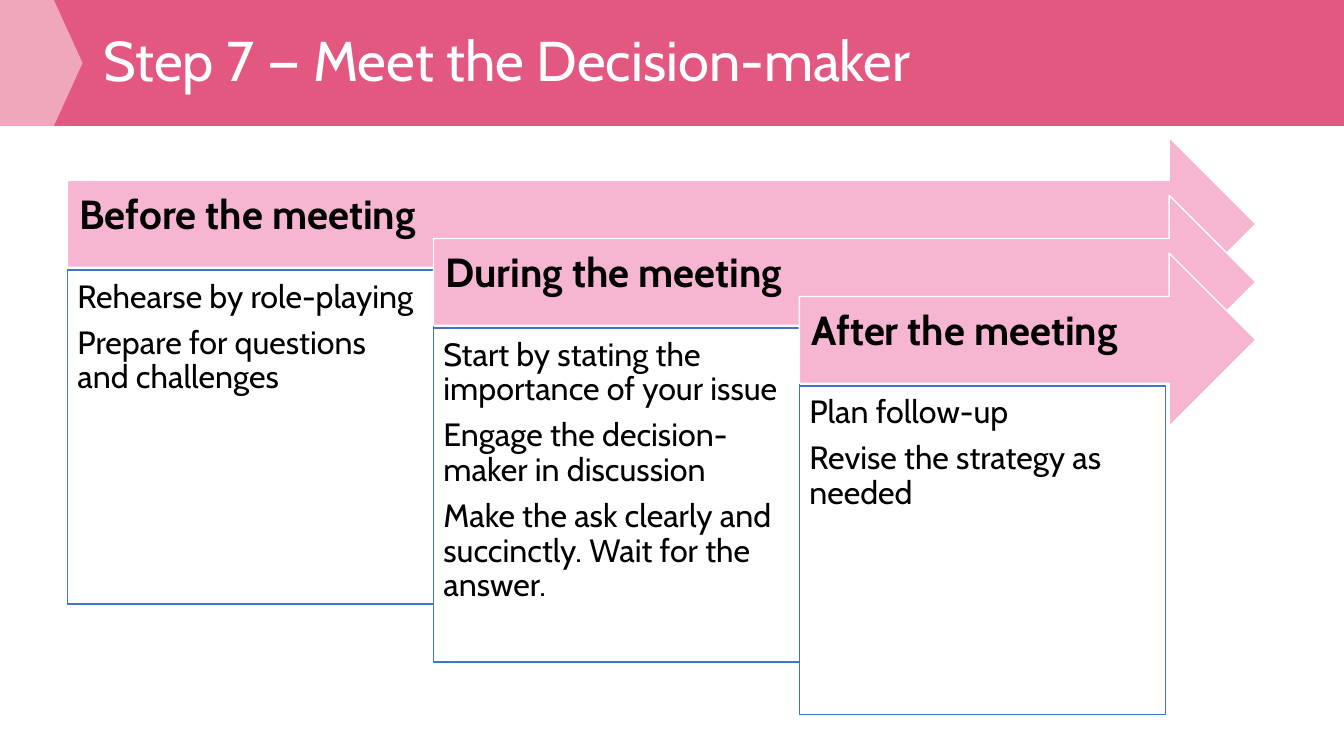
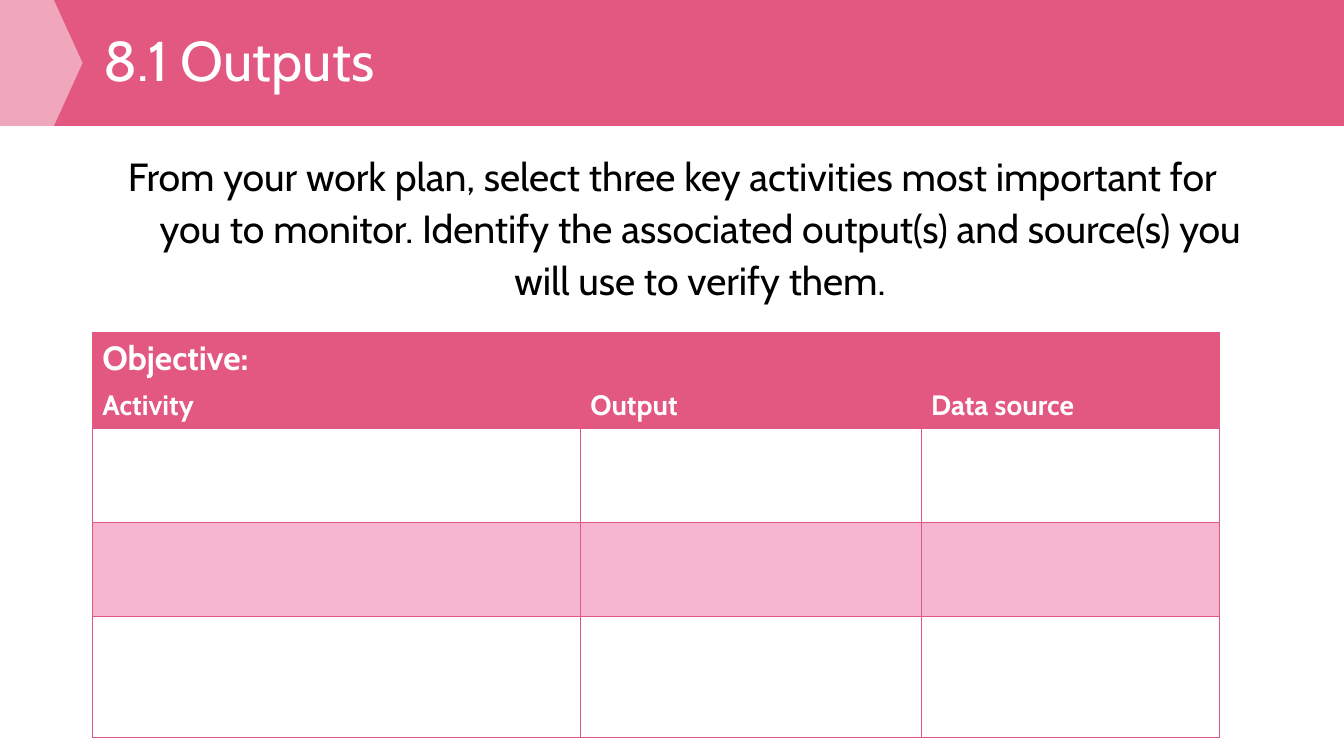
from lxml import etree
from pptx import Presentation
from pptx.dml.color import RGBColor
from pptx.enum.shapes import MSO_SHAPE
from pptx.enum.text import MSO_ANCHOR, PP_ALIGN
from pptx.oxml.ns import qn
from pptx.util import Pt

RECT, ARROW, PENTAGON = MSO_SHAPE.RECTANGLE, MSO_SHAPE.RIGHT_ARROW, MSO_SHAPE.PENTAGON
TOP, MIDDLE = MSO_ANCHOR.TOP, MSO_ANCHOR.MIDDLE
LEFT, CENTER = PP_ALIGN.LEFT, PP_ALIGN.CENTER

ROSE = RGBColor(0xE3, 0x58, 0x80)
PINK = RGBColor(0xF6, 0xB5, 0xD1)
BLUE = RGBColor(0x44, 0x72, 0xC4)
WHITE = RGBColor(0xFF, 0xFF, 0xFF)
BLACK = RGBColor(0, 0, 0)

FONT = "Cabin"
WIDTH, HEIGHT = 960, 540
BAND_H = 90

STAGE_LEFT, STAGE_TOP, STAGE_RIGHT = 48.25, 98, 897.1
STAGE_W, STAGE_DROP = 261.4, 41.4
ARROW_H, BOX_OFFSET = 124, 95
STAGES = [
    ("Before the meeting", 238.4,
     ["Rehearse by role-playing", "Prepare for questions and challenges"]),
    ("During the meeting", 238.4,
     ["Start by stating the importance of your issue",
      "Engage the decision-maker in discussion",
      "Make the ask clearly and succinctly. Wait for the answer."]),
    ("After the meeting", 234.7,
     ["Plan follow-up", "Revise the strategy as needed"]),
]

TASK = ("From your work plan, select three key activities most important for "
        "you to monitor. Identify the associated output(s) and source(s) you "
        "will use to verify them.")
COLUMNS = [("Activity", 348.5), ("Output", 243.4), ("Data source", 213.1)]
ROW_HEIGHTS = [36.4, 32, 67, 67, 87]
ROW_FILLS = [ROSE, ROSE, WHITE, PINK, WHITE]


class Deck:
    def __init__(self):
        self.prs = Presentation()
        self.prs.slide_width, self.prs.slide_height = Pt(WIDTH), Pt(HEIGHT)
        self.s = None

    def slide(self, title):
        self.s = self.prs.slides.add_slide(self.prs.slide_layouts[6])
        self.shape(RECT, 0, 0, WIDTH, BAND_H, ROSE)
        tab = self.shape(PENTAGON, 0, 0, 59, BAND_H, WHITE)
        tab.adjustments[0] = 0.348
        color = tab.fill._xPr.find(qn("a:solidFill"))[0]
        etree.SubElement(color, qn("a:alpha"), val="47000")
        self.text(67, 14.4, 762, 62, title, 40, WHITE, anchor=MIDDLE)

    def shape(self, kind, x, y, w, h, fill, line=None):
        sp = self.s.shapes.add_shape(kind, Pt(x), Pt(y), Pt(w), Pt(h))
        sp.shadow.inherit = False
        sp.fill.solid()
        sp.fill.fore_color.rgb = fill
        if line is None:
            sp.line.fill.background()
        else:
            sp.line.color.rgb = line
            sp.line.width = Pt(1)
        return sp

    def style(self, p, size, color, bold=False):
        for r in p.runs:
            r.font.name, r.font.size, r.font.bold = FONT, Pt(size), bold
            r.font.color.rgb = color

    def fill_text(self, sp, lines, size, margins, anchor=TOP, bold=False):
        tf = sp.text_frame
        tf.word_wrap = True
        tf.vertical_anchor = anchor
        tf.margin_left, tf.margin_top, tf.margin_right, tf.margin_bottom = map(Pt, margins)
        tf.text = "\n".join(lines)
        for p in tf.paragraphs:
            p.alignment = LEFT
            p.line_spacing = 0.9
            p.space_after = Pt(round(size * 0.35))
            self.style(p, size, BLACK, bold)

    def text(self, x, y, w, h, text, size, color, anchor=TOP, align=LEFT,
             spacing=0.9, hanging=0):
        tf = self.s.shapes.add_textbox(Pt(x), Pt(y), Pt(w), Pt(h)).text_frame
        tf.word_wrap = True
        tf.vertical_anchor = anchor
        tf.text = text
        p = tf.paragraphs[0]
        p.alignment = align
        p.line_spacing = spacing
        if hanging:
            pPr = p._p.get_or_add_pPr()
            pPr.set("marL", str(Pt(hanging)))
            pPr.set("indent", str(Pt(-hanging)))
        self.style(p, size, color)

    def stage(self, x, y, heading, box_h, lines):
        arrow = self.shape(ARROW, x, y, STAGE_RIGHT - x, ARROW_H, PINK, WHITE)
        self.fill_text(arrow, [heading], 29, (8.6, 8.6, 20, 19.4), MIDDLE, True)
        box = self.shape(RECT, x, y + BOX_OFFSET, STAGE_W, box_h, WHITE, BLUE)
        self.fill_text(box, lines, 23, (7.2, 7.2, 7.2, 7.2))

    def cell_text(self, cell, text, size):
        cell.text_frame.text = text
        self.style(cell.text_frame.paragraphs[0], size, WHITE, True)

    def borders(self, cell, color):
        tcPr = cell._tc.get_or_add_tcPr()
        for i, side in enumerate(("lnL", "lnR", "lnT", "lnB")):
            ln = etree.Element(qn("a:" + side), w=str(Pt(0.5)))
            fill = etree.SubElement(ln, qn("a:solidFill"))
            etree.SubElement(fill, qn("a:srgbClr"), val=str(color))
            tcPr.insert(i, ln)

    def table(self, x, y, title, columns, heights, fills):
        widths = [w for _, w in columns]
        tbl = self.s.shapes.add_table(len(heights), len(columns), Pt(x), Pt(y),
                                      Pt(sum(widths)), Pt(sum(heights))).table
        for col, w in zip(tbl.columns, widths):
            col.width = Pt(w)
        for row, h, fill in zip(tbl.rows, heights, fills):
            row.height = Pt(h)
            for cell in row.cells:
                cell.fill.solid()
                cell.fill.fore_color.rgb = fill
                self.borders(cell, ROSE)
        tbl.cell(0, 0).merge(tbl.cell(0, len(columns) - 1))
        self.cell_text(tbl.cell(0, 0), title, 24)
        for i, (name, _) in enumerate(columns):
            self.cell_text(tbl.cell(1, i), name, 20)


def main():
    deck = Deck()

    deck.slide("Step 7 — Meet the Decision-maker")
    for i, (heading, box_h, lines) in enumerate(STAGES):
        deck.stage(STAGE_LEFT + i * STAGE_W, STAGE_TOP + i * STAGE_DROP,
                   heading, box_h, lines)

    deck.slide("8.1 Outputs")
    deck.text(66, 102, 828, 372, TASK, 28, BLACK, align=CENTER, spacing=1.1, hanging=40)
    deck.table(66, 237.6, "Objective:", COLUMNS, ROW_HEIGHTS, ROW_FILLS)

    deck.prs.save("out.pptx")


if __name__ == "__main__":
    main()
